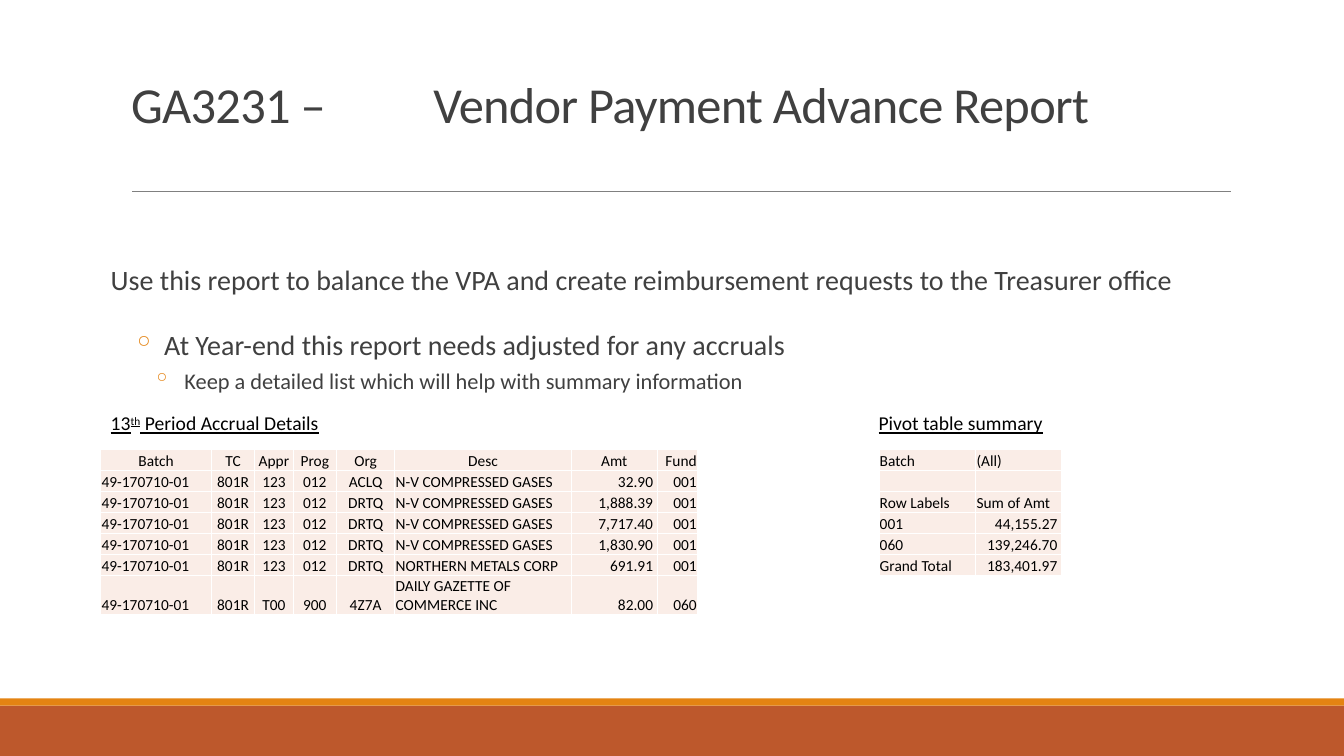
from lxml import etree
from pptx import Presentation
from pptx.dml.color import RGBColor
from pptx.enum.shapes import MSO_CONNECTOR, MSO_SHAPE
from pptx.enum.text import MSO_ANCHOR, MSO_AUTO_SIZE, PP_ALIGN
from pptx.oxml.ns import qn
from pptx.util import Cm, Pt

LEFT, MID, RIGHT = PP_ALIGN.LEFT, PP_ALIGN.CENTER, PP_ALIGN.RIGHT
BOTTOM = MSO_ANCHOR.BOTTOM
RECT, LINE = MSO_SHAPE.RECTANGLE, MSO_CONNECTOR.STRAIGHT
FIXED = MSO_AUTO_SIZE.NONE
FONT, GREY, BLACK = "Calibri", "404040", "000000"
ORANGE, RUST, PINK = "E48312", "BD582C", "FAEDE7"
ROW = 0.53

BATCH = "49-170710-01"
HEAD = ["Batch", "TC", "Appr", "Prog", "Org", "Desc", "Amt", "Fund"]
ITEMS = [
    ("123", "012", "ACLQ", "N-V COMPRESSED GASES", "32.90", "001"),
    ("123", "012", "DRTQ", "N-V COMPRESSED GASES", "1,888.39", "001"),
    ("123", "012", "DRTQ", "N-V COMPRESSED GASES", "7,717.40", "001"),
    ("123", "012", "DRTQ", "N-V COMPRESSED GASES", "1,830.90", "001"),
    ("123", "012", "DRTQ", "NORTHERN METALS CORP", "691.91", "001"),
    ("T00", "900", "4Z7A", "DAILY GAZETTE OF COMMERCE INC", "82.00", "060"),
]
PIVOT = [
    ("Batch", "(All)"),
    ("", ""),
    ("Row Labels", "Sum of Amt"),
    ("001", "44,155.27"),
    ("060", "139,246.70"),
    ("Grand Total", "183,401.97"),
]


def paint(color, code):
    color.rgb = RGBColor.from_string(code)


def style(par, size, code, align=LEFT):
    par.alignment = align
    par.font.name = FONT
    par.font.size = Pt(size)
    paint(par.font.color, code)


def add_bar(slide, top, height, code):
    bar = slide.shapes.add_shape(RECT, 0, Cm(top), Cm(33.87), Cm(height))
    bar.shadow.inherit = False
    bar.fill.solid()
    paint(bar.fill.fore_color, code)
    bar.line.fill.background()


def add_rule(slide):
    rule = slide.shapes.add_connector(LINE, Cm(3.33), Cm(4.82), Cm(31.01), Cm(4.82))
    paint(rule.line.color, "808080")
    rule.line.width = Pt(0.5)
    etree.SubElement(rule._element.spPr, qn("a:effectLst"))


def set_title(slide):
    title = slide.shapes.title
    title.left, title.top = Cm(3.05), Cm(0.79)
    title.width, title.height = Cm(27.94), Cm(4.04)
    frame = title.text_frame
    frame.auto_size = FIXED
    frame.word_wrap = True
    frame.vertical_anchor = BOTTOM
    frame.margin_bottom = Cm(1.45)
    par = frame.paragraphs[0]
    run = par.add_run()
    run.text = "GA3231 –\tVendor Payment Advance Report"
    run.font._element.set("spc", "-50")
    props = par._p.get_or_add_pPr()
    tabs = etree.SubElement(props, qn("a:tabLst"))
    etree.SubElement(tabs, qn("a:tab"), pos=str(Cm(7.62)), algn="l")
    style(par, 36, GREY)
    par.line_spacing = 0.85


def add_box(slide, left, top, width, height):
    box = slide.shapes.add_textbox(Cm(left), Cm(top), Cm(width), Cm(height))
    box.text_frame.word_wrap = True
    return box.text_frame


def add_point(par, text, size, left, hang, before, after):
    par.text = text
    props = par._p.get_or_add_pPr()
    props.set("marL", str(Cm(left)))
    props.set("indent", str(Cm(-hang)))
    if hang:
        tint = etree.SubElement(props, qn("a:buClr"))
        etree.SubElement(tint, qn("a:srgbClr"), val=ORANGE)
        etree.SubElement(props, qn("a:buChar"), char="◦")
    style(par, size, GREY)
    par.line_spacing = 0.9
    par.space_before = Pt(before)
    par.space_after = Pt(after)


def add_body(slide):
    frame = add_box(slide, 2.54, 6.58, 28.78, 9.5)
    frame.margin_left = frame.margin_right = 0
    add_point(frame.paragraphs[0], "Use this report to balance the VPA and create "
              "reimbursement requests to the Treasurer office", 20, 0.25, 0, 0, 2)
    add_point(frame.add_paragraph(), "At Year-end this report needs adjusted for any accruals",
              20, 1.6, 0.79, 23, 4)
    add_point(frame.add_paragraph(), "Keep a detailed list which will help with "
              "summary information", 16, 2.11, 0.79, 2, 4)


def add_label(slide, left, width, *parts):
    par = add_box(slide, left, 10.24, width, 0.86).paragraphs[0]
    for text, raised in parts:
        run = par.add_run()
        run.text = text
        if raised:
            run.font._element.set("baseline", "30000")
    style(par, 14, BLACK)
    par.font.underline = True


def fill_cell(cell, text, align):
    cell.fill.solid()
    paint(cell.fill.fore_color, PINK)
    cell.vertical_anchor = BOTTOM
    cell.margin_left = cell.margin_top = Cm(0.02)
    cell.margin_right = Cm(0.1 if "." in text else 0.02)
    cell.margin_bottom = 0
    par = cell.text_frame.paragraphs[0]
    par.text = text
    style(par, 11, BLACK, align)
    if not text:
        par._p.get_or_add_endParaRPr().set("sz", "1100")


def add_grid(slide, left, rows, widths, heights, pick):
    frame = slide.shapes.add_table(len(rows), len(widths), Cm(left), Cm(11.33),
                                   Cm(sum(widths)), Cm(sum(heights)))
    table = frame.table
    table.first_row = table.horz_banding = False
    for col, width in zip(table.columns, widths):
        col.width = Cm(width)
    for row, height in zip(table.rows, heights):
        row.height = Cm(height)
    for r, texts in enumerate(rows):
        for c, text in enumerate(texts):
            fill_cell(table.cell(r, c), text, pick(r, c))


def pick_item(r, c):
    if c == 7:
        return RIGHT
    if r == 0:
        return MID
    return {0: LEFT, 5: LEFT, 6: RIGHT}.get(c, MID)


def pick_sum(r, c):
    return RIGHT if r > 2 and c == 1 else LEFT


def main():
    deck = Presentation()
    deck.slide_width, deck.slide_height = Cm(33.87), Cm(19.05)
    slide = deck.slides.add_slide(deck.slide_layouts[5])
    add_bar(slide, 17.78, 1.27, RUST)
    add_bar(slide, 17.6, 0.18, ORANGE)
    add_rule(slide)
    set_title(slide)
    add_body(slide)
    rows = [HEAD] + [(BATCH, "801R", *item) for item in ITEMS]
    add_grid(slide, 2.54, rows, [2.79, 1.09, 0.97, 1.09, 1.47, 4.45, 2.16, 1.02],
             [ROW] * 6 + [0.97], pick_item)
    add_grid(slide, 22.15, PIVOT, [2.44, 2.16], [ROW] * 6, pick_sum)
    add_label(slide, 21.89, 5.97, ("Pivot table summary", False))
    add_label(slide, 2.54, 15.04, ("13", False), ("th", True),
              (" Period Accrual Details", False))
    deck.save("out.pptx")


if __name__ == "__main__":
    main()
